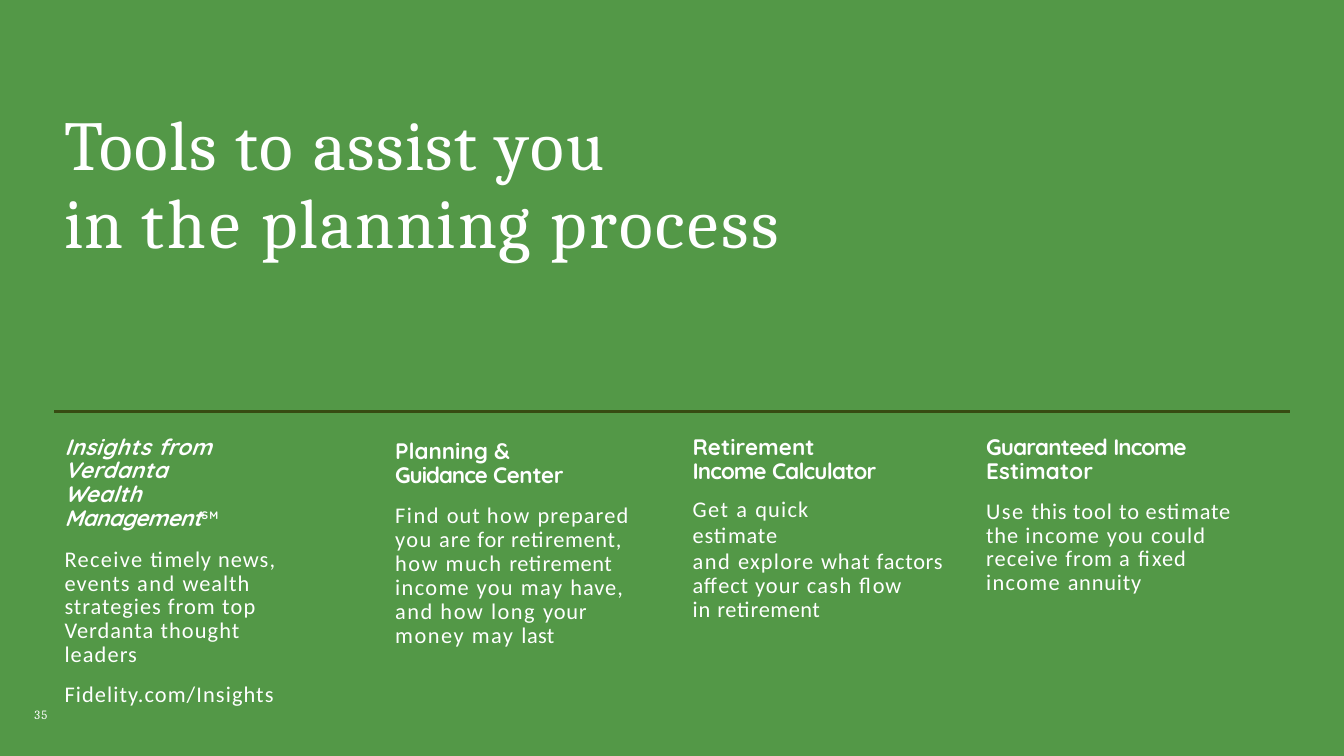
"""Build the slide that presents four retirement planning tools."""
from dataclasses import dataclass

from lxml.etree import SubElement
from pptx import Presentation
from pptx.dml.color import RGBColor
from pptx.enum.shapes import MSO_CONNECTOR, MSO_SHAPE
from pptx.enum.text import MSO_ANCHOR, MSO_AUTO_SIZE, PP_ALIGN
from pptx.oxml.ns import qn
from pptx.util import Inches, Pt


@dataclass(frozen=True)
class TextStyle:
    font: str
    size: float
    bold: bool = False
    italic: bool = False
    baseline: int = 0


@dataclass(frozen=True)
class Theme:
    green: RGBColor = RGBColor(0x36, 0x87, 0x27)
    rule: RGBColor = RGBColor(0x37, 0x4B, 0x12)
    white: RGBColor = RGBColor(0xFF, 0xFF, 0xFF)
    title: TextStyle = TextStyle("Cambria", 50)
    head: TextStyle = TextStyle("Quicksand", 16, bold=True)
    lead: TextStyle = TextStyle("Quicksand", 16, bold=True, italic=True)
    mark: TextStyle = TextStyle("Quicksand", 13.5, bold=True, baseline=37000)
    body: TextStyle = TextStyle("Calibri", 16)
    number: TextStyle = TextStyle("Cambria", 9)


@dataclass(frozen=True)
class Para:
    """Lines of (text, letter spacing[, style]) runs that share one style."""
    style: TextStyle
    lines: list
    spacing: object = Pt(17)
    before: float = 0


class SlideBuilder:
    def __init__(self, prs, theme):
        self.theme = theme
        self.s = prs.slides.add_slide(prs.slide_layouts[5])

    def backdrop(self, width, height, opacity):
        sp = self.s.shapes.add_shape(MSO_SHAPE.RECTANGLE, 0, 0, width, height)
        sp.shadow.inherit = False
        sp.fill.solid()
        sp.fill.fore_color.rgb = self.theme.green
        sp.line.fill.background()
        color = sp._element.spPr.find(qn("a:solidFill"))[0]
        SubElement(color, qn("a:alpha")).set("val", str(opacity * 1000))
        tree = self.s.shapes._spTree
        tree.remove(sp._element)
        tree.insert(2, sp._element)

    def rule(self, left, top, width):
        cx = self.s.shapes.add_connector(
            MSO_CONNECTOR.STRAIGHT, Inches(left), Inches(top),
            Inches(left + width), Inches(top))
        cx.line.color.rgb = self.theme.rule
        cx.line.width = Pt(2.5)
        SubElement(cx._element.spPr, qn("a:effectLst"))

    def title(self, box, paras):
        sp = self.s.shapes.title
        sp.left, sp.top, sp.width, sp.height = map(Inches, box)
        self.fill_text(sp.text_frame, paras, 0.01, 0.01)

    def text(self, box, paras, inset_left=0.01, inset_top=0.05):
        sp = self.s.shapes.add_textbox(*map(Inches, box))
        self.fill_text(sp.text_frame, paras, inset_left, inset_top)

    def fill_text(self, tf, paras, inset_left, inset_top):
        tf.word_wrap = True
        tf.auto_size = MSO_AUTO_SIZE.NONE
        tf.vertical_anchor = MSO_ANCHOR.TOP
        tf.margin_left, tf.margin_top = Inches(inset_left), Inches(inset_top)
        tf.margin_right = tf.margin_bottom = 0
        for i, para in enumerate(paras):
            p = tf.add_paragraph() if i else tf.paragraphs[0]
            p.alignment = PP_ALIGN.LEFT
            p.line_spacing = para.spacing
            p.space_before = Pt(para.before)
            for j, line in enumerate(para.lines):
                if j:
                    p.add_line_break()
                for text, tracking, *style in line:
                    self.add_text(p, text, tracking, style[0] if style else para.style)

    def add_text(self, p, text, tracking, style):
        r = p.add_run()
        r.text = text
        r.font.name, r.font.size = style.font, Pt(style.size)
        r.font.bold, r.font.italic = style.bold, style.italic
        r.font.color.rgb = self.theme.white
        rPr = r._r.get_or_add_rPr()
        rPr.set("spc", str(round(tracking * 100)))
        if style.baseline:
            rPr.set("baseline", str(style.baseline))


def main():
    prs = Presentation()
    prs.slide_width, prs.slide_height = Inches(13.33), Inches(7.5)
    t = Theme()
    slide = SlideBuilder(prs, t)
    slide.backdrop(prs.slide_width, prs.slide_height, 85)
    slide.title((0.63, 1.05, 7.68, 1.57), [
        Para(t.title, [[("Tools ", 0.9), ("to ", 1.7), ("assist ", 0.9), ("you", 1.9)]],
             Pt(55.5)),
        Para(t.title, [[("in ", 0.8), ("the ", 2.1), ("planning ", 1.3), ("process", 2)]],
             Pt(55.5)),
    ])
    slide.rule(0.54, 4.08, 12.25)

    slide.text((0.6, 4.28, 2.48, 2.28), [
        Para(t.lead, [
            [("Insights ", 0.3), ("from", 0.2)],
            [("Verdanta", 0.2)],
            [("Wealth", 0.1)],
            [("Management", -0.4), ("SM", 0.9, t.mark)],
        ], 0.88),
        Para(t.body, [
            [("Receive ", 1), ("timely ", 0.6), ("news,", 0.8)],
            [("events ", 0.8), ("and ", 1.1), ("wealth", 0.7)],
            [("strategies from ", 0.7), ("top", 0.9)],
            [("Verdanta ", 0.7), ("thought leaders", 0.8)],
        ], before=12.2),
        Para(t.body, [[("Fidelity.com/Insights", 0.8)]], 1.0, 9.6),
    ], inset_left=0.04)

    slide.text((3.91, 4.32, 2.37, 2.11), [
        Para(t.head, [
            [("Planning ", 0), ("&", 1.8)],
            [("Guidance ", -0.7), ("Center", -0.2)],
        ]),
        Para(t.body, [
            [("Find ", 1.1), ("out ", 0.7), ("how ", 1.1), ("prepared", 0.8)],
            [("you ", 1), ("are ", 0.7), ("for retirement,", 0.5)],
            [("how much ", 1.1), ("retirement", 0.4)],
            [("income you ", 1), ("may ", 1.1), ("have,", 0.7)],
            [("and how long ", 1.1), ("your", 0.6)],
            [("money may ", 1.1), ("last", 0.3)],
        ], 0.89, 11.8),
    ])

    slide.text((6.86, 4.28, 2.56, 1.64), [
        Para(t.head, [
            [("Retirement", 0.1)],
            [("Income ", -0.6), ("Calculator", -0.5)],
        ]),
        Para(t.body, [
            [("Get a ", 1.1), ("quick", 0.9)],
            [("estimate", 0.6)],
        ], Pt(18.6), 8.4),
        Para(t.body, [
            [("and ", 1.1), ("explore ", 0.9), ("what ", 0.7), ("factors", 0.5)],
            [("affect ", 0.6), ("your ", 0.8), ("cash ", 1), ("flow", 0.6)],
        ], before=1.8),
        Para(t.body, [[("in ", 0.7), ("retirement", 0.4)]], Pt(16.9)),
    ])

    slide.text((9.77, 4.28, 2.51, 1.64), [
        Para(t.head, [
            [("Guaranteed ", -0.5), ("Income", -0.7)],
            [("Estimator", 0.2)],
        ]),
        Para(t.body, [
            [("Use ", 1.1), ("this ", 0.5), ("tool ", 0.7), ("to estimate", 0.6)],
            [("the ", 0.7), ("income you ", 1), ("could", 0.8)],
            [("receive ", 0.8), ("from ", 0.7), ("a ", 1.1), ("fixed", 0.7)],
            [("income ", 1), ("annuity", 0.6)],
        ], 0.88, 11.9),
    ])

    slide.text((0.3, 6.99, 0.23, 0.2), [Para(t.number, [[("35", 0.9)]], 1.0)],
               inset_left=0.04, inset_top=0.02)
    prs.save("out.pptx")


if __name__ == "__main__":
    main()
